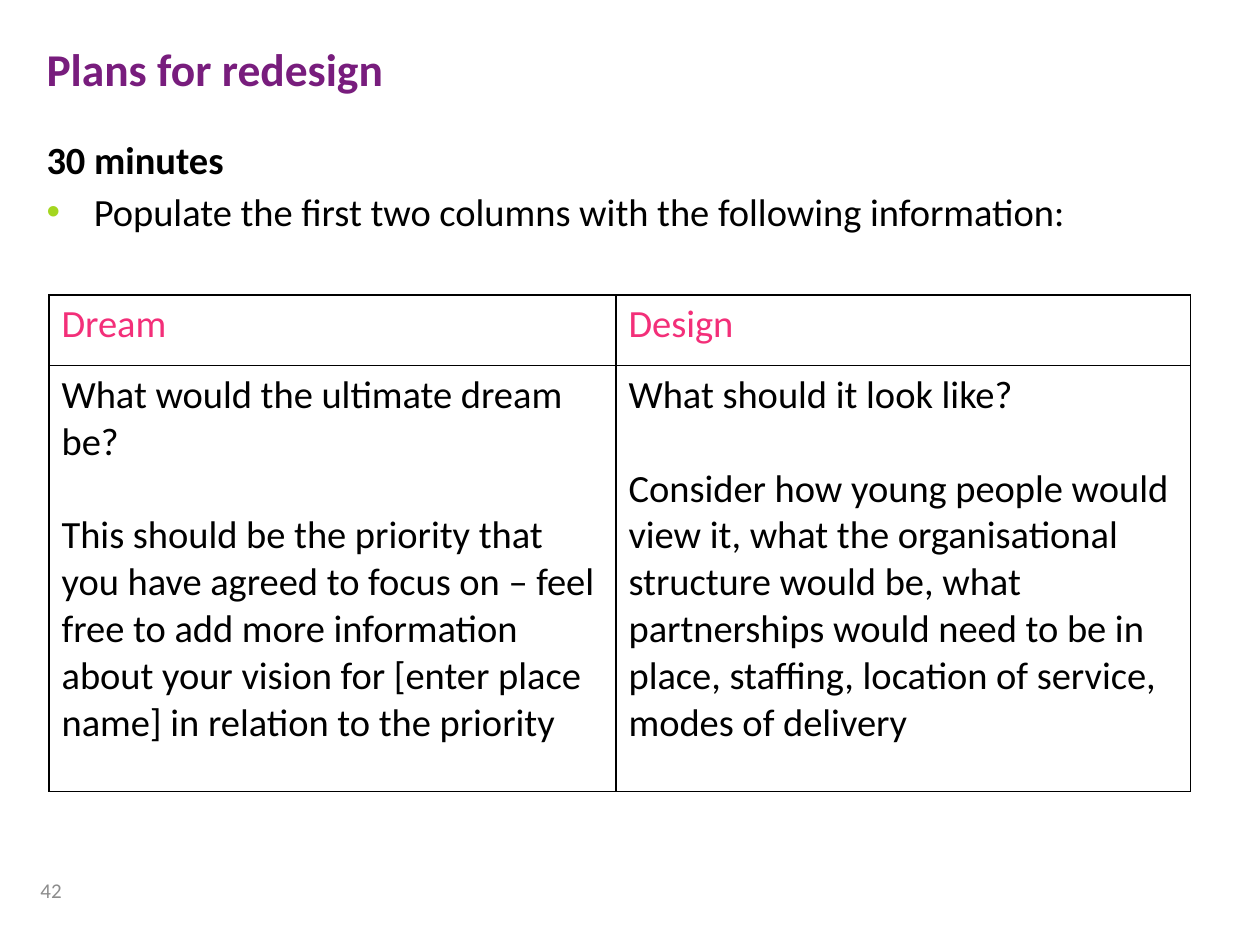
import pptx
import pptx.dml.color
import pptx.enum.text
import pptx.oxml
import pptx.oxml.ns
import pptx.util

Pt = pptx.util.Pt
ALIGN = pptx.enum.text.PP_ALIGN
ANCHOR = pptx.enum.text.MSO_ANCHOR

FONT = "Calibri"
BLACK, PURPLE, PINK, GREEN, GREY = "000000", "781D7D", "F32F79", "A4D620", "8C8C8C"
BODY_SIZE = 22
BLANK_LINE = 26.85

TITLE = "Plans for redesign"
DURATION = "30 minutes"
TASK = "Populate the first two columns with the following information:"
PAGE_NUMBER = "42"
COLUMNS = [
    ("Dream", [
        "What would the ultimate dream be?",
        "This should be the priority that you have agreed to focus on – feel free to add "
        "more information about your vision for [enter place name] in relation to the priority",
    ]),
    ("Design", [
        "What should it look like?",
        "Consider how young people would view it, what the organisational structure would be, "
        "what partnerships would need to be in place, staffing, location of service, "
        "modes of delivery",
    ]),
]
TABLE_LEFT, TABLE_TOP = 28, 168.5
COLUMN_WIDTHS = [324, 328.3]
ROW_HEIGHTS = [40.3, 243.4]


def color(value):
    return pptx.dml.color.RGBColor.from_string(value)


def fill_text(frame, lines, size, ink, bold=False):
    frame.text = "\n".join(lines)
    frame.word_wrap = True
    for paragraph in frame.paragraphs:
        for run in paragraph.runs:
            run.font.name = FONT
            run.font.size = Pt(size)
            run.font.bold = bold
            run.font.color.rgb = color(ink)
    return frame.paragraphs


def add_text(slide, box, lines, size, ink, bold=False):
    shape = slide.shapes.add_textbox(*map(Pt, box))
    fill_text(shape.text_frame, lines, size, ink, bold)
    return shape.text_frame


def add_bullet(paragraph, indent):
    properties = paragraph._p.get_or_add_pPr()
    properties.set("marL", str(Pt(indent)))
    properties.set("indent", str(-Pt(indent)))
    namespace = pptx.oxml.ns.nsdecls("a")
    for xml in (
        f'<a:buClr {namespace}><a:srgbClr val="{GREEN}"/></a:buClr>',
        f'<a:buFont {namespace} typeface="Arial"/>',
        f'<a:buChar {namespace} char="•"/>',
    ):
        properties.append(pptx.oxml.parse_xml(xml))


def style_cell(cell):
    properties = cell._tc.get_or_add_tcPr()
    for side in ("lnL", "lnR", "lnT", "lnB"):
        properties.append(pptx.oxml.parse_xml(
            f'<a:{side} {pptx.oxml.ns.nsdecls("a")} w="{Pt(1)}">'
            f'<a:solidFill><a:srgbClr val="{BLACK}"/></a:solidFill></a:{side}>'
        ))
    cell.fill.background()


def add_plan_table(slide):
    table = slide.shapes.add_table(
        len(ROW_HEIGHTS), len(COLUMNS), Pt(TABLE_LEFT), Pt(TABLE_TOP),
        Pt(sum(COLUMN_WIDTHS)), Pt(sum(ROW_HEIGHTS)),
    ).table
    table.first_row = False
    table.horz_banding = False
    for row, height in zip(table.rows, ROW_HEIGHTS):
        row.height = Pt(height)
    for index, (heading, details) in enumerate(COLUMNS):
        table.columns[index].width = Pt(COLUMN_WIDTHS[index])
        fill_text(table.cell(0, index).text_frame, [heading], BODY_SIZE, PINK)
        paragraphs = fill_text(table.cell(1, index).text_frame, details, BODY_SIZE, BLACK)
        paragraphs[1].space_before = Pt(BLANK_LINE)
    for cell in table.iter_cells():
        style_cell(cell)


def main():
    presentation = pptx.Presentation()
    presentation.slide_width, presentation.slide_height = Pt(720), Pt(540)
    slide = presentation.slides.add_slide(presentation.slide_layouts[6])

    number = add_text(slide, (8.6, 494, 33.8, 28.8), [PAGE_NUMBER], 12, GREY)
    number.vertical_anchor = ANCHOR.MIDDLE
    number.paragraphs[0].alignment = ALIGN.RIGHT

    title = add_text(slide, (19.5, 20, 538.5, 45.4), [TITLE], 26, PURPLE, True)
    title.paragraphs[0].space_before = Pt(2)

    body = add_text(slide, (19.5, 74, 680.4, 426), [DURATION, TASK], BODY_SIZE, BLACK)
    duration, task = body.paragraphs
    duration.runs[0].font.bold = True
    duration.space_before = Pt(1.5)
    task.space_before = Pt(3.5)
    add_bullet(task, 27)

    add_plan_table(slide)
    presentation.save("out.pptx")


if __name__ == "__main__":
    main()
